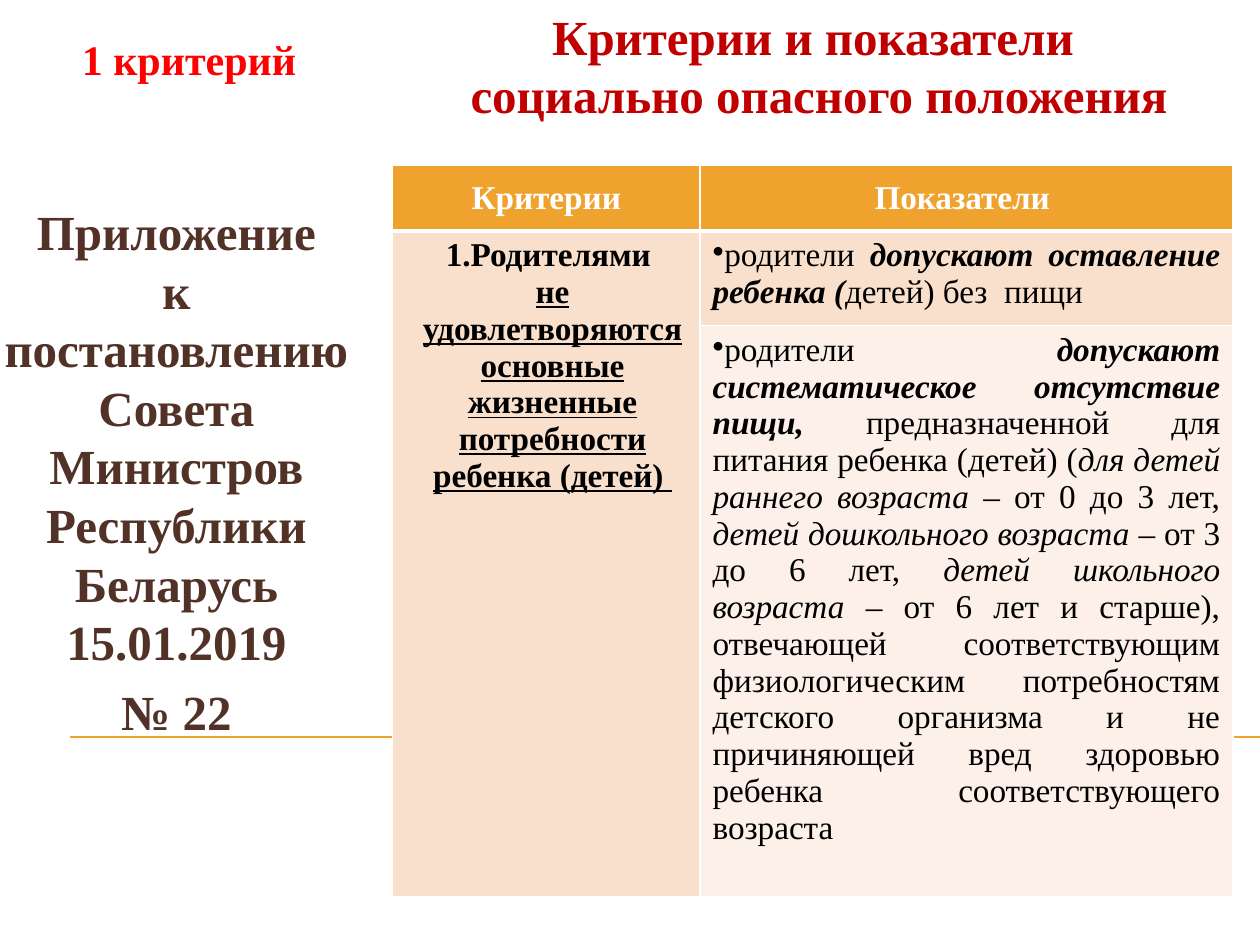
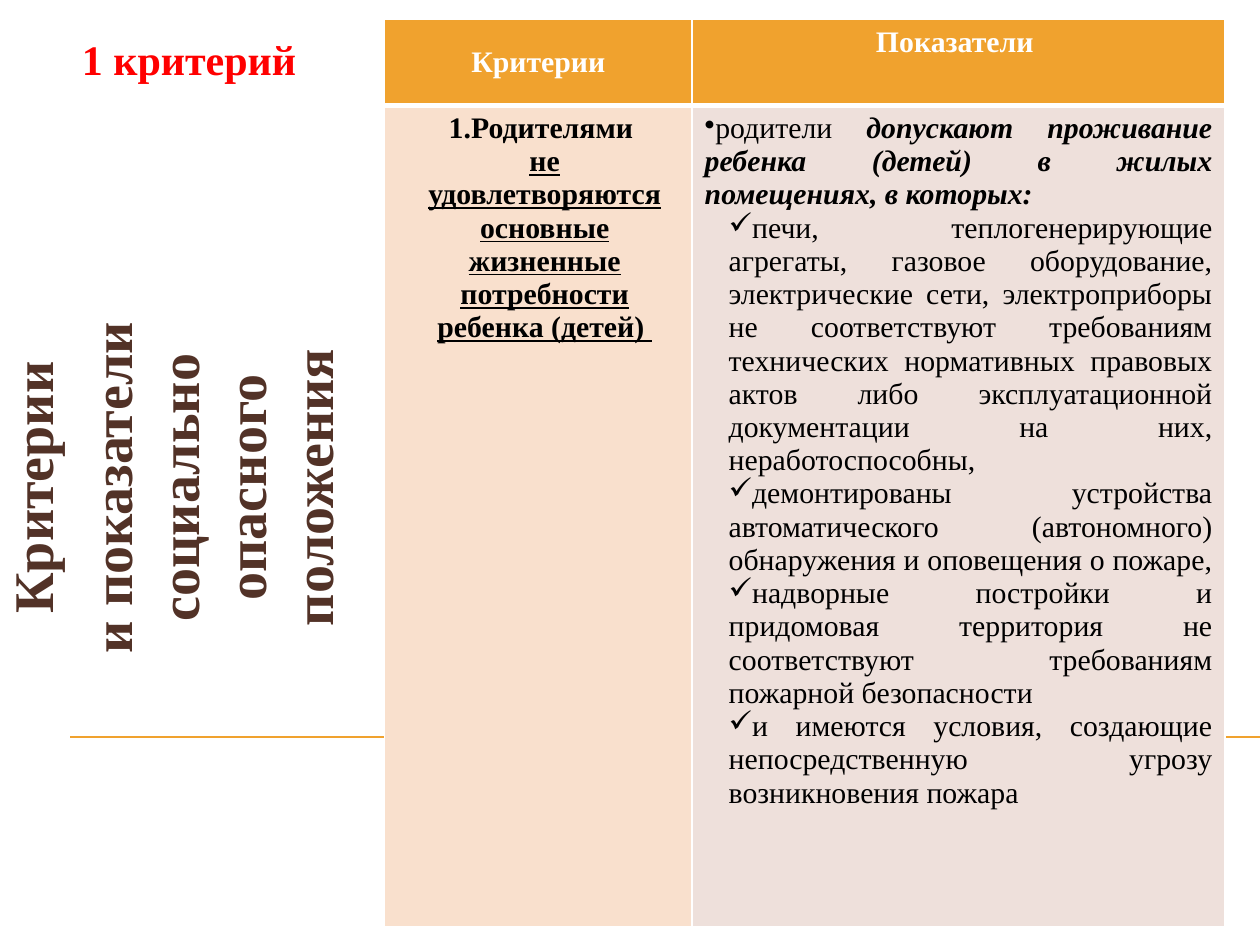
"""Build two slides on the criteria and indicators of a socially dangerous situation."""

import dataclasses
import typing

import lxml.etree
import pptx
import pptx.dml.color
import pptx.enum.shapes
import pptx.enum.text
import pptx.oxml.ns
import pptx.util

Pt = pptx.util.Pt
Align = pptx.enum.text.PP_ALIGN
Anchor = pptx.enum.text.MSO_ANCHOR
qn = pptx.oxml.ns.qn


class Style(typing.NamedTuple):
    size: float
    leading: float
    color: str


class Run(typing.NamedTuple):
    text: str
    bold: bool = False
    italic: bool = False
    underline: bool = False


class Paragraph(typing.NamedTuple):
    runs: tuple[Run, ...]
    align: Align = Align.CENTER
    bullet: str = ""
    indent: float = 0
    before: float = 0


class Box(typing.NamedTuple):
    left: float
    top: float
    width: float
    height: float


class Cell(typing.NamedTuple):
    row: int
    column: int
    paragraphs: tuple[Paragraph, ...]
    fill: str
    anchor: Anchor = Anchor.TOP
    row_span: int = 1


@dataclasses.dataclass(frozen=True)
class Theme:
    font: str = "Times New Roman"
    white: str = "FFFFFF"
    black: str = "000000"
    orange: str = "F0A22E"
    peach: str = "F9E0CD"
    cream: str = "FCF0E8"
    rose: str = "EEE0DB"
    title: Style = Style(28, 33.5, "C00000")
    label: Style = Style(24, 29, "FF0000")
    sidebar: Style = Style(28, 33.5, "523227")
    vertical_title: Style = Style(32, 38.3, "523227")
    thin_border: float = 1
    thick_border: float = 3


THEME = Theme()
LABEL_BOX = Box(25.2, 15.1, 165.6, 36.7)
COLUMN_WIDTHS = (175.7, 304.5)


def bold_line(text: str, before: float = 0) -> Paragraph:
    """Return a centred bold paragraph."""
    return Paragraph((Run(text, bold=True),), before=before)


def indicator(*runs: Run) -> Paragraph:
    """Return a justified bulleted paragraph."""
    return Paragraph(runs, Align.JUSTIFY, "•")


def check_item(text: str) -> Paragraph:
    """Return a justified paragraph with a check mark."""
    return Paragraph((Run(text),), Align.JUSTIFY, "✓", 13.7)


LABEL = (bold_line("1 критерий"),)
CRITERION = (
    Paragraph((Run("Родителями ", bold=True),), bullet="1.", indent=7.2),
    Paragraph(
        (Run("не\nудовлетворяются\nосновные жизненные потребности\nребенка (детей) ",
             bold=True, underline=True),),
        indent=7.2,
    ),
)
MISSING_FOOD = indicator(
    Run("родители "),
    Run("допускают оставление ребенка (", bold=True, italic=True),
    Run("детей) без  пищи "),
)
REGULAR_HUNGER = indicator(
    Run("родители "),
    Run("допускают систематическое отсутствие пищи, ", bold=True, italic=True),
    Run("предназначенной для питания ребенка (детей) ("),
    Run("для детей раннего возраста", italic=True),
    Run(" – от 0 до 3 лет, "),
    Run("детей дошкольного возраста ", italic=True),
    Run("– от 3 до 6 лет, "),
    Run("детей школьного возраста ", italic=True),
    Run("– от 6 лет и старше), отвечающей соответствующим физиологическим потребностям "
        "детского организма и не причиняющей вред здоровью ребенка "
        "соответствующего возраста"),
)
UNSAFE_HOUSING = (
    indicator(
        Run("родители "),
        Run("допускают проживание ребенка (детей) в жилых помещениях, в которых: ",
            bold=True, italic=True),
    ),
    check_item("печи, теплогенерирующие агрегаты, газовое оборудование, электрические сети, "
               "электроприборы не соответствуют требованиям технических нормативных правовых "
               "актов либо эксплуатационной документации на них, неработоспособны,"),
    check_item("демонтированы устройства автоматического (автономного) обнаружения "
               "и оповещения о пожаре, "),
    check_item("надворные постройки и придомовая территория не соответствуют требованиям "
               "пожарной безопасности"),
    check_item("и имеются условия, создающие непосредственную угрозу возникновения пожара"),
)


def rgb(color: str) -> pptx.dml.color.RGBColor:
    """Convert a hex string to a colour."""
    return pptx.dml.color.RGBColor.from_string(color)


def add_bullet(paragraph, bullet: str) -> None:
    """Give the paragraph a numbered or character bullet."""
    properties = paragraph._p.get_or_add_pPr()
    if bullet == "1.":
        lxml.etree.SubElement(properties, qn("a:buAutoNum"), type="arabicPeriod")
    elif bullet:
        lxml.etree.SubElement(properties, qn("a:buChar"), char=bullet)
    else:
        lxml.etree.SubElement(properties, qn("a:buNone"))


def write_text(frame, paragraphs: tuple[Paragraph, ...], style: Style) -> None:
    """Write the paragraphs run by run in one style."""
    for index, content in enumerate(paragraphs):
        paragraph = frame.paragraphs[0] if index == 0 else frame.add_paragraph()
        paragraph.alignment = content.align
        paragraph.line_spacing = Pt(style.leading)
        paragraph.space_before = Pt(content.before)
        properties = paragraph._p.get_or_add_pPr()
        properties.set("marL", str(Pt(content.indent)))
        properties.set("indent", "0")
        add_bullet(paragraph, content.bullet)
        for part in content.runs:
            for line_index, line in enumerate(part.text.split("\n")):
                if line_index:
                    paragraph.add_line_break()
                run = paragraph.add_run()
                run.text = line
                run.font.name = THEME.font
                run.font.size = Pt(style.size)
                run.font.bold = part.bold
                run.font.italic = part.italic
                run.font.underline = part.underline
                run.font.color.rgb = rgb(style.color)


def fill_box(shape, box: Box, paragraphs: tuple[Paragraph, ...], style: Style,
             anchor: Anchor = Anchor.TOP, side_margin: float = 7.2) -> None:
    """Place a text shape and fill it."""
    shape.left, shape.top, shape.width, shape.height = map(Pt, box)
    frame = shape.text_frame
    frame.word_wrap = True
    frame.auto_size = pptx.enum.text.MSO_AUTO_SIZE.NONE
    frame.vertical_anchor = anchor
    frame.margin_left = frame.margin_right = Pt(side_margin)
    frame.margin_top = frame.margin_bottom = Pt(3.6)
    write_text(frame, paragraphs, style)


def set_borders(cell, top: float, bottom: float) -> None:
    """Draw white borders around a table cell."""
    properties = cell._tc.get_or_add_tcPr()
    widths = {"L": THEME.thin_border, "R": THEME.thin_border, "T": top, "B": bottom}
    for side, width in widths.items():
        line = lxml.etree.SubElement(properties, qn(f"a:ln{side}"), w=str(Pt(width)))
        fill = lxml.etree.SubElement(line, qn("a:solidFill"))
        lxml.etree.SubElement(fill, qn("a:srgbClr"), val=THEME.white)


def add_criteria_table(slide, left: float, top: float, row_heights: tuple[float, ...],
                       size: float, leading: float, cells: tuple[Cell, ...],
                       indicator_anchor: Anchor = Anchor.MIDDLE) -> None:
    """Add a table with the shared header and the given body cells."""
    table = slide.shapes.add_table(
        len(row_heights), len(COLUMN_WIDTHS), Pt(left), Pt(top),
        Pt(sum(COLUMN_WIDTHS)), Pt(sum(row_heights)),
    ).table
    for column, width in zip(table.columns, COLUMN_WIDTHS):
        column.width = Pt(width)
    for row, height in zip(table.rows, row_heights):
        row.height = Pt(height)
    header = (
        Cell(0, 0, (bold_line("Критерии"),), THEME.orange, Anchor.MIDDLE),
        Cell(0, 1, (bold_line("Показатели "),), THEME.orange, indicator_anchor),
    )
    for content in header + cells:
        cell = table.cell(content.row, content.column)
        if content.row_span > 1:
            cell.merge(table.cell(content.row + content.row_span - 1, content.column))
        set_borders(
            cell,
            THEME.thick_border if content.row == 1 else THEME.thin_border,
            THEME.thick_border if content.row == 0 else THEME.thin_border,
        )
        cell.fill.solid()
        cell.fill.fore_color.rgb = rgb(content.fill)
        cell.vertical_anchor = content.anchor
        cell.margin_left = cell.margin_right = Pt(7.2)
        cell.margin_top = cell.margin_bottom = Pt(3.6)
        color = THEME.white if content.row == 0 else THEME.black
        write_text(cell.text_frame, content.paragraphs, Style(size, leading, color))


def add_master_line(presentation, slide) -> None:
    """Put the shared orange line on the slide master."""
    line = slide.shapes.add_connector(
        pptx.enum.shapes.MSO_CONNECTOR.STRAIGHT, Pt(40.3), Pt(421.2), Pt(720), Pt(421.2))
    line.line.color.rgb = rgb(THEME.orange)
    line.line.width = Pt(0.75)
    lxml.etree.SubElement(line.element.spPr, qn("a:effectLst"))
    presentation.slide_master.shapes.element.append(line.element)


def build_food_slide(slide) -> None:
    """Build the slide on food indicators."""
    title, sidebar = slide.placeholders
    fill_box(title, Box(241.2, 0, 453.6, 74.9),
             (bold_line("Критерии и показатели "), bold_line("социально опасного положения")),
             THEME.title)
    fill_box(sidebar, Box(0, 111.6, 201.6, 266.4),
             (bold_line("Приложение\nк постановлению Совета Министров\n"
                        "Республики Беларусь\n15.01.2019"),
              bold_line("№ 22", before=6)),
             THEME.sidebar, side_margin=0)
    add_criteria_table(slide, 224.3, 94.6, (37.4, 54, 326.2), 19, 21, (
        Cell(1, 0, CRITERION, THEME.peach, row_span=2),
        Cell(1, 1, (MISSING_FOOD,), THEME.peach),
        Cell(2, 1, (REGULAR_HUNGER,), THEME.cream),
    ))
    label = slide.shapes.add_textbox(*map(Pt, LABEL_BOX))
    fill_box(label, LABEL_BOX, LABEL, THEME.label)


def build_housing_slide(slide) -> None:
    """Build the slide on housing indicators."""
    label, sidebar = slide.placeholders
    fill_box(label, LABEL_BOX, LABEL, THEME.label)
    fill_box(sidebar, Box(-23, 187.9, 266.4, 181.4),
             (bold_line("Критерии"),
              bold_line("и показатели социально опасного положения", before=7)),
             THEME.vertical_title, Anchor.BOTTOM)
    sidebar.rotation = 270
    add_criteria_table(slide, 219.8, 11.2, (49, 469.4), 17, 19, (
        Cell(1, 0, CRITERION, THEME.peach),
        Cell(1, 1, UNSAFE_HOUSING, THEME.rose),
    ), indicator_anchor=Anchor.TOP)


def main() -> None:
    """Create and save the presentation."""
    presentation = pptx.Presentation()
    presentation.slide_width, presentation.slide_height = Pt(720), Pt(540)
    layout = presentation.slide_layouts[0]
    food_slide = presentation.slides.add_slide(layout)
    add_master_line(presentation, food_slide)
    build_food_slide(food_slide)
    build_housing_slide(presentation.slides.add_slide(layout))
    presentation.save("out.pptx")


if __name__ == "__main__":
    main()
